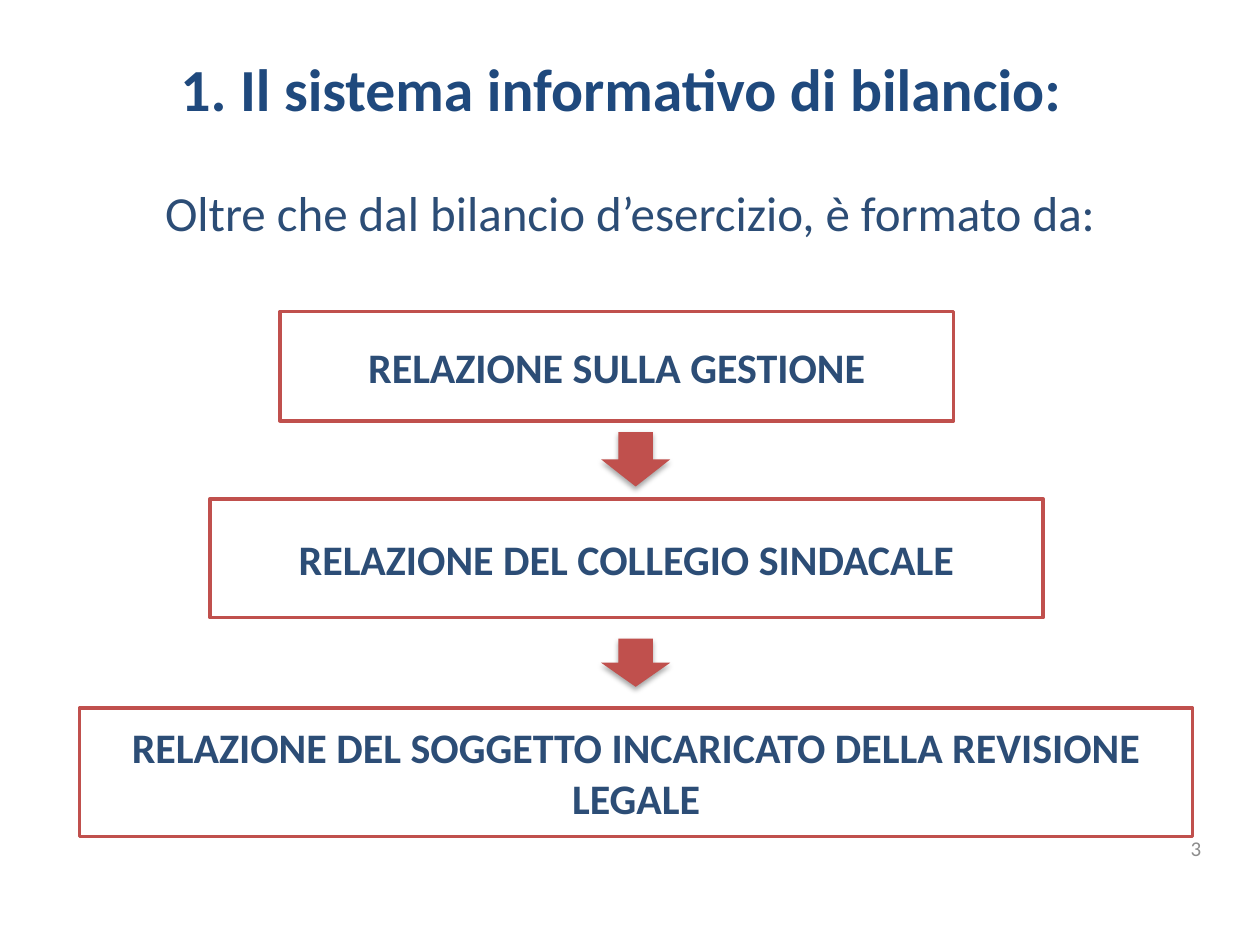
"""Build the slide on the reports that complete the financial statements."""
import pptx
import pptx.util
import pptx.dml.color
import pptx.enum.shapes
import pptx.enum.text
import pptx.oxml

Pt = pptx.util.Pt
SHAPES = pptx.enum.shapes.MSO_SHAPE
ALIGN = pptx.enum.text.PP_ALIGN
ANCHOR = pptx.enum.text.MSO_ANCHOR

TITLE = "1. Il sistema informativo di bilancio:"
INTRO = "Oltre che dal bilancio d’esercizio, è formato da:"
PAGE_NUMBER = "3"
NAVY, BLUE, RED, GREY, WHITE = "1F497D", "2C4D76", "C0504D", "8C8C8C", "FFFFFF"
REPORTS = [
    ("RELAZIONE SULLA GESTIONE", (160, 178, 385, 62.5)),
    ("RELAZIONE DEL COLLEGIO SINDACALE", (120, 285, 476, 68)),
    ("RELAZIONE DEL SOGGETTO INCARICATO DELLA REVISIONE LEGALE", (45.5, 404.5, 636, 73.5)),
]
ARROW_LEFT, ARROW_WIDTH = 343.5, 39.5
ARROWS = [(247, 31), (365, 27.5)]
SHADOW = (
    '<a:effectLst xmlns:a="http://schemas.openxmlformats.org/drawingml/2006/main">'
    '<a:outerShdw blurRad="39370" dist="22860" dir="5400000" rotWithShape="0">'
    '<a:srgbClr val="000000"><a:alpha val="35000"/></a:srgbClr>'
    "</a:outerShdw></a:effectLst>"
)


def color(value):
    return pptx.dml.color.RGBColor.from_string(value)


def points(*lengths):
    return [Pt(length) for length in lengths]


def write(shape, text, size, ink, bold=False, align=ALIGN.CENTER, anchor=ANCHOR.MIDDLE):
    frame = shape.text_frame
    frame.text = text
    frame.word_wrap = True
    frame.auto_size = pptx.enum.text.MSO_AUTO_SIZE.NONE
    frame.vertical_anchor = anchor
    para = frame.paragraphs[0]
    para.alignment = align
    font = para.runs[0].font
    font.name, font.size, font.bold = "Calibri", Pt(size), bold
    font.color.rgb = color(ink)


def add_filled(page, kind, place, fill):
    shape = page.shapes.add_shape(kind, *points(*place))
    shape.shadow.inherit = False
    shape.fill.solid()
    shape.fill.fore_color.rgb = color(fill)
    return shape


def add_report(page, text, place):
    box = add_filled(page, SHAPES.RECTANGLE, place, WHITE)
    box.line.color.rgb = color(RED)
    box.line.width = Pt(2)
    write(box, text, 24, BLUE, bold=True)


def add_arrow(page, top, height):
    arrow = add_filled(page, SHAPES.DOWN_ARROW, (ARROW_LEFT, top, ARROW_WIDTH, height), RED)
    arrow.line.fill.background()
    properties = arrow.element.spPr
    properties.remove(properties.find(pptx.oxml.ns.qn("a:effectLst")))
    properties.append(pptx.oxml.parse_xml(SHADOW))


def main():
    deck = pptx.Presentation()
    deck.slide_width, deck.slide_height = points(720, 540)
    page = deck.slides.add_slide(deck.slide_layouts[5])

    title = page.shapes.title
    title.left, title.top, title.width, title.height = points(14.5, -19.5, 680.5, 139)
    write(title, TITLE, 34.1, NAVY, bold=True)

    intro = page.shapes.add_textbox(*points(36, 101, 648, 48))
    write(intro, INTRO, 28, BLUE, anchor=ANCHOR.TOP)
    intro.text_frame.paragraphs[0].space_before = Pt(5.6)

    for text, place in REPORTS:
        add_report(page, text, place)
    for top, height in ARROWS:
        add_arrow(page, top, height)

    number = page.shapes.add_textbox(*points(525.5, 470, 168, 29))
    write(number, PAGE_NUMBER, 12, GREY, align=ALIGN.RIGHT)
    deck.save("out.pptx")


if __name__ == "__main__":
    main()
